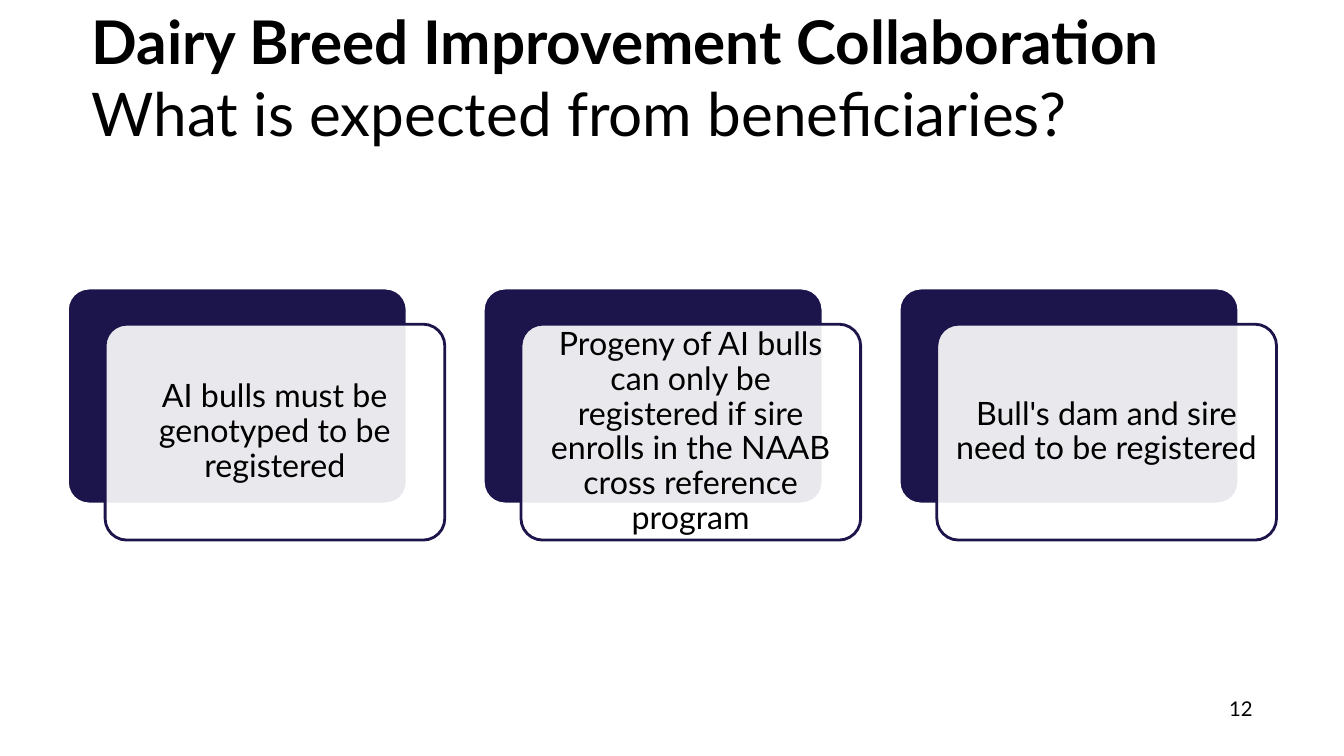
"""Build a slide listing three expectations for breed improvement beneficiaries."""
from dataclasses import dataclass

from lxml import etree
from pptx import Presentation
from pptx.dml.color import RGBColor
from pptx.enum.shapes import MSO_SHAPE
from pptx.enum.text import MSO_ANCHOR, PP_ALIGN
from pptx.oxml.ns import qn
from pptx.util import Cm, Pt

ROUNDED = MSO_SHAPE.ROUNDED_RECTANGLE
MIDDLE, BOTTOM = MSO_ANCHOR.MIDDLE, MSO_ANCHOR.BOTTOM
LEFT, CENTER, RIGHT = PP_ALIGN.LEFT, PP_ALIGN.CENTER, PP_ALIGN.RIGHT


@dataclass(frozen=True)
class Theme:
    font: str = "Lato"
    navy: RGBColor = RGBColor(0x1B, 0x15, 0x4B)
    white: RGBColor = RGBColor(0xFF, 0xFF, 0xFF)
    black: RGBColor = RGBColor(0x00, 0x00, 0x00)
    title_size: Pt = Pt(43)
    card_size: Pt = Pt(23)
    number_size: Pt = Pt(14.5)
    outline: Pt = Pt(2)


theme = Theme()


def style_text(shape, size, alignment, anchor, inset_x, inset_y):
    frame = shape.text_frame
    frame.word_wrap = True
    frame.vertical_anchor = anchor
    frame.margin_left = frame.margin_right = Cm(inset_x)
    frame.margin_top = frame.margin_bottom = Cm(inset_y)
    paragraph = frame.paragraphs[0]
    paragraph.alignment = alignment
    paragraph.font.name = theme.font
    paragraph.font.size = size
    paragraph.font.color.rgb = theme.black
    return paragraph


def add_panel(slide, left, top, fill, line):
    shape = slide.shapes.add_shape(ROUNDED, Cm(left), Cm(top), Cm(8.56), Cm(5.44))
    shape.adjustments[0] = 0.1
    shape.shadow.inherit = False
    shape.fill.solid()
    shape.fill.fore_color.rgb = fill
    shape.line.color.rgb = line
    shape.line.width = theme.outline
    return shape


presentation = Presentation()
presentation.slide_width = Cm(33.87)
presentation.slide_height = Cm(19.05)
slide = presentation.slides.add_slide(presentation.slide_layouts[6])

title = slide.shapes.add_textbox(Cm(1.7), Cm(0.33), Cm(30.48), Cm(3.71))
title_paragraph = style_text(title, theme.title_size, LEFT, BOTTOM, 0.61, 0.3)
heading = title_paragraph.add_run()
heading.text = "Dairy Breed Improvement Collaboration"
heading.font.bold = True
title_paragraph.add_line_break()
question = title_paragraph.add_run()
question.text = "What is expected from beneficiaries?"

expectations = [
    "AI bulls must be genotyped to be registered",
    "Progeny of AI bulls can only be registered if sire enrolls in the NAAB cross reference program",
    "Bull's dam and sire need to be registered",
]
card_left, card_top, card_pitch = 1.7, 7.26, 10.48
offset_x, offset_y = 0.95, 0.91

for index, expectation in enumerate(expectations):
    left = card_left + index * card_pitch
    add_panel(slide, left, card_top, theme.navy, theme.white)
    card = add_panel(slide, left + offset_x, card_top + offset_y, theme.white, theme.navy)
    fill_color = card.fill._xPr.find(qn("a:solidFill"))[0]
    etree.SubElement(fill_color, qn("a:alpha"), val="90000")
    card.text_frame.text = expectation
    card_paragraph = style_text(card, theme.card_size, CENTER, MIDDLE, 0.25, 0.25)
    card_paragraph.line_spacing = 0.9

page_number = slide.shapes.add_textbox(Cm(24.28), Cm(17.35), Cm(7.9), Cm(1.02))
page_number.text_frame.text = "12"
style_text(page_number, theme.number_size, RIGHT, MIDDLE, 0.61, 0.3)

presentation.save("out.pptx")
